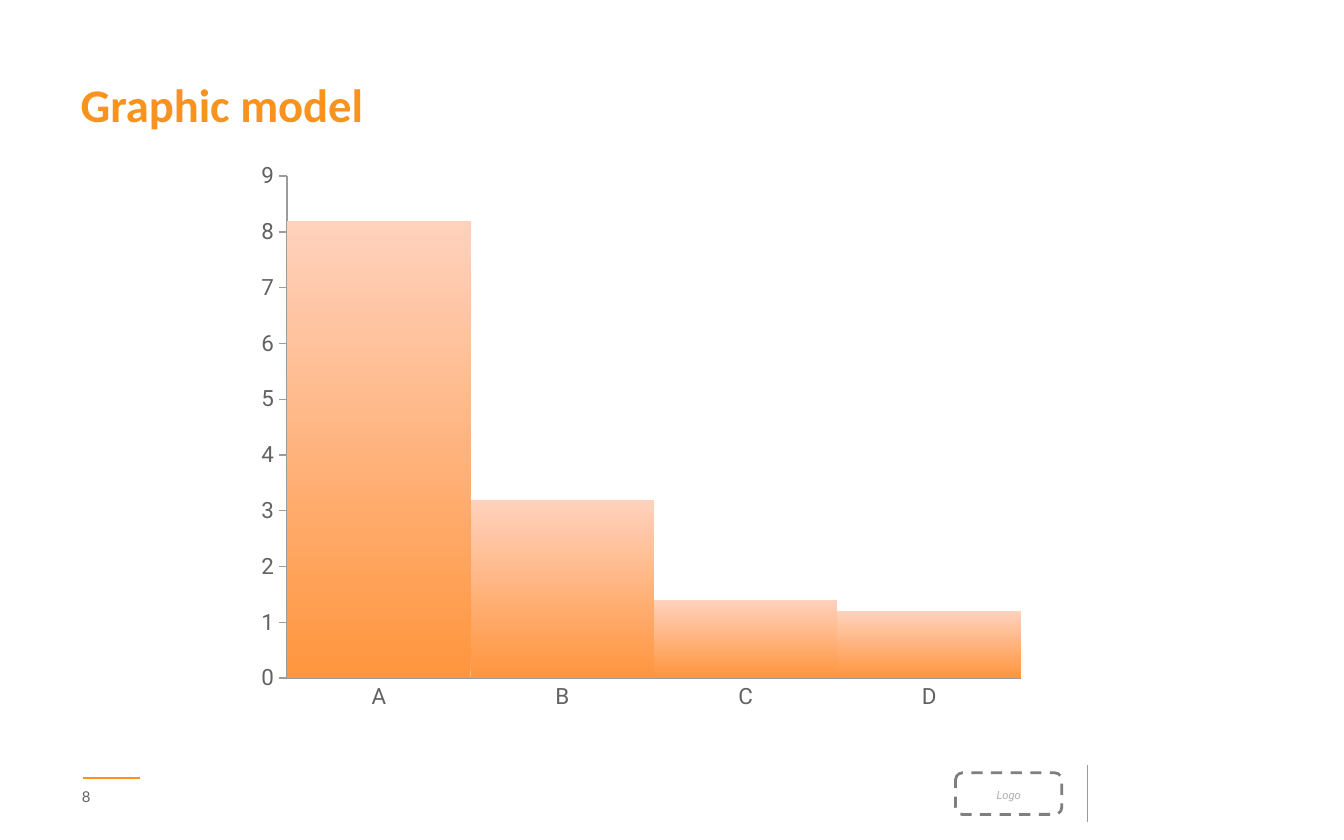
import pptx
import pptx.chart.data
import pptx.dml.color
import pptx.enum.chart
import pptx.enum.dml
import pptx.enum.shapes
import pptx.enum.text
import pptx.oxml
import pptx.oxml.ns
import pptx.util

ORANGE = "F7931E"
GREY_TEXT = "626262"
GREY_LINE = "9B9B9B"
PLOT_SHARES = {"x": 0.052, "y": 0.045, "w": 0.927, "h": 0.881}


def colour(value):
    return pptx.dml.color.RGBColor.from_string(value)


def inches(*values):
    return [pptx.util.Inches(value) for value in values]


def style_font(font, name, size, value, bold=False, italic=False):
    font.name = name
    font.size = pptx.util.Pt(size)
    font.color.rgb = colour(value)
    font.bold = bold
    font.italic = italic


def style_line(line, value, width):
    line.color.rgb = colour(value)
    line.width = pptx.util.Pt(width)


def write(box, text, align, name, size, value, **style):
    """Put one formatted run into the first paragraph of a box."""
    box.text_frame.word_wrap = True
    para = box.text_frame.paragraphs[0]
    para.alignment = align
    span = para.add_run()
    span.text = text
    style_font(span.font, name, size, value, **style)


def add_title(page, text):
    title = page.shapes.title
    title.left, title.top, title.width, title.height = inches(0.5, 0.25, 6, 1.04)
    title.text_frame.vertical_anchor = pptx.enum.text.MSO_ANCHOR.MIDDLE
    write(title, text, pptx.enum.text.PP_ALIGN.LEFT, "Calibri", 25, ORANGE, bold=True)


def add_rule(page, start, end, value):
    rule = page.shapes.add_connector(
        pptx.enum.shapes.MSO_CONNECTOR.STRAIGHT, *inches(*start, *end))
    style_line(rule.line, value, 0.75)
    rule._element.spPr.append(pptx.oxml.parse_xml(
        f'<a:effectLst {pptx.oxml.ns.nsdecls("a")}/>'))


def add_logo_frame(page):
    frame = page.shapes.add_shape(
        pptx.enum.shapes.MSO_SHAPE.ROUNDED_RECTANGLE, *inches(7.11, 5.75, 0.79, 0.31))
    frame.shadow.inherit = False
    frame.fill.background()
    style_line(frame.line, "7F7F7F", 1.5)
    frame.line.dash_style = pptx.enum.dml.MSO_LINE.DASH
    label = page.shapes.add_textbox(*inches(7.11, 5.82, 0.79, 0.2))
    write(label, "Logo", pptx.enum.text.PP_ALIGN.CENTER, "Roboto", 6, "B0B0B0", italic=True)


def add_footer(page, number):
    box = page.shapes.add_textbox(*inches(0.51, 5.81, 0.42, 0.24))
    write(box, number, pptx.enum.text.PP_ALIGN.LEFT, "Lato", 8, GREY_TEXT)
    add_rule(page, (0.62, 5.79), (1.04, 5.79), ORANGE)
    add_logo_frame(page)
    add_rule(page, (8.09, 5.69), (8.09, 6.12), GREY_LINE)


def place_plot(chart):
    """Fix the inner plot area as shares of the chart's size."""
    area = chart._chartSpace.chart.plotArea
    for layout in area.findall(pptx.oxml.ns.qn("c:layout")):
        area.remove(layout)
    modes = "".join(f'<c:{key}Mode val="edge"/>' for key in "xy")
    shares = "".join(f'<c:{key} val="{share}"/>' for key, share in PLOT_SHARES.items())
    area.insert(0, pptx.oxml.parse_xml(
        f'<c:layout {pptx.oxml.ns.nsdecls("c")}><c:manualLayout>'
        f'<c:layoutTarget val="inner"/>{modes}{shares}</c:manualLayout></c:layout>'))


def style_axis(axis, tick):
    axis.has_major_gridlines = False
    axis.major_tick_mark = tick
    axis.minor_tick_mark = pptx.enum.chart.XL_TICK_MARK.NONE
    style_font(axis.tick_labels.font, "Roboto", 12, GREY_TEXT)
    style_line(axis.format.line, GREY_LINE, 0.75)


def add_column_chart(page):
    data = pptx.chart.data.CategoryChartData()
    data.categories = ["A", "B", "C", "D"]
    data.add_series("Series 1", (8.2, 3.2, 1.4, 1.2))
    chart = page.shapes.add_chart(
        pptx.enum.chart.XL_CHART_TYPE.COLUMN_CLUSTERED,
        *inches(1.83, 1.12, 5.89, 4.24), data).chart
    chart.has_title = False
    chart.has_legend = False
    style_font(chart.font, "Calibri", 18, GREY_TEXT)
    place_plot(chart)

    style_axis(chart.category_axis, pptx.enum.chart.XL_TICK_MARK.NONE)
    style_axis(chart.value_axis, pptx.enum.chart.XL_TICK_MARK.OUTSIDE)
    chart.value_axis.minimum_scale = 0
    chart.value_axis.maximum_scale = 9
    chart.value_axis.major_unit = 1

    plot = chart.plots[0]
    plot.gap_width = 0
    plot.vary_by_categories = False
    fill = plot.series[0].format.fill
    fill.gradient()
    fill.gradient_angle = 90
    for stop, value in zip(fill.gradient_stops, ("FF953E", "FFD2BD")):
        stop.color.rgb = colour(value)


def main():
    deck = pptx.Presentation()
    deck.slide_width, deck.slide_height = inches(10, 6.25)
    page = deck.slides.add_slide(deck.slide_layouts[5])
    add_footer(page, "8")
    add_column_chart(page)
    add_title(page, "Graphic model")
    deck.save("out.pptx")


if __name__ == "__main__":
    main()
